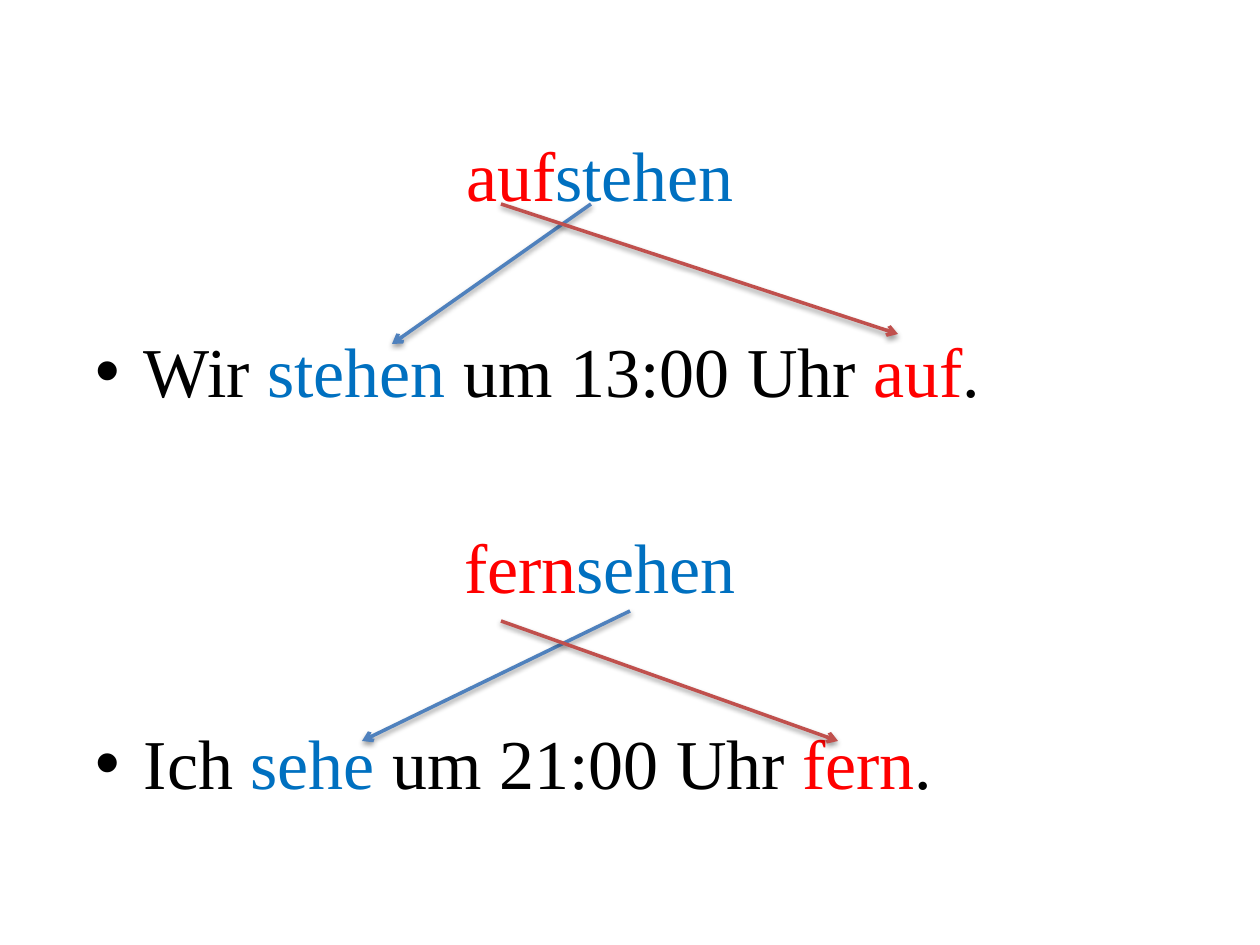
from dataclasses import dataclass

from lxml import etree
from pptx import Presentation
from pptx import util as u
from pptx.dml.color import RGBColor
from pptx.enum import shapes, text
from pptx.oxml import ns

EMU_PER_PX = 914400 / 126


def px(length):
    return u.Emu(round(length * EMU_PER_PX))


@dataclass(frozen=True)
class Theme:
    font: str = "Times New Roman"
    size: int = 40
    gap: int = 64
    line_width: int = 2
    plain: str = "000000"
    prefix: str = "FF0000"
    stem: str = "0070C0"
    prefix_arrow: str = "C0504D"
    stem_arrow: str = "4F81BD"
    shadow: str = "000000"


class SlideBuilder:
    def __init__(self, slide, theme):
        self.slide = slide
        self.theme = theme

    def add_child(self, parent, tag, **attributes):
        return etree.SubElement(parent, ns.qn(tag), attributes)

    def text_body(self, left, top, width, height):
        frame = self.slide.shapes.add_textbox(
            px(left), px(top), px(width), px(height)
        ).text_frame
        frame.word_wrap = True
        frame.margin_left = frame.margin_right = px(12)
        frame.margin_top = frame.margin_bottom = px(7)
        return frame

    def paragraph(self, frame, parts, bulleted):
        first = frame.paragraphs[0]
        line = frame.add_paragraph() if first.runs else first
        line.space_after = u.Pt(self.theme.gap)
        if bulleted:
            self.bullet(line)
        else:
            line.alignment = text.PP_ALIGN.CENTER
        line.font.name = self.theme.font
        line.font.size = u.Pt(self.theme.size)
        for wording, color in parts:
            run = line.add_run()
            run.text = wording
            run.font.color.rgb = RGBColor.from_string(color)

    def bullet(self, line):
        properties = line._p.get_or_add_pPr()
        properties.set("marL", str(px(48)))
        properties.set("indent", str(px(-48)))
        self.add_child(properties, "a:buFont", typeface="Arial")
        self.add_child(properties, "a:buChar", char="•")

    def arrow(self, start, end, color):
        connector = self.slide.shapes.add_connector(
            shapes.MSO_CONNECTOR.STRAIGHT, *map(px, start + end)
        )
        connector.line.color.rgb = RGBColor.from_string(color)
        connector.line.width = u.Pt(self.theme.line_width)
        self.add_child(connector.line._get_or_add_ln(), "a:tailEnd", type="arrow")
        effects = self.add_child(connector._element.spPr, "a:effectLst")
        shadow = self.add_child(
            effects, "a:outerShdw", blurRad="40000", dist="20000",
            dir="5400000", rotWithShape="0",
        )
        shade = self.add_child(shadow, "a:srgbClr", val=self.theme.shadow)
        self.add_child(shade, "a:alpha", val="38000")


def main():
    theme = Theme()
    presentation = Presentation()
    presentation.slide_width = px(1260)
    presentation.slide_height = px(945)
    slide = presentation.slides.add_slide(presentation.slide_layouts[6])
    builder = SlideBuilder(slide, theme)

    examples = [
        ("auf", "stehen", "Wir ", "stehen", " um 13:00 Uhr "),
        ("fern", "sehen", "Ich ", "sehe", " um 21:00 Uhr "),
    ]
    body = builder.text_body(84, 125, 1032, 665)
    for prefix, stem, subject, verb, time in examples:
        infinitive = [(prefix, theme.prefix), (stem, theme.stem)]
        sentence = [
            (subject, theme.plain),
            (verb, theme.stem),
            (time, theme.plain),
            (prefix, theme.prefix),
            (".", theme.plain),
        ]
        builder.paragraph(body, infinitive, bulleted=False)
        builder.paragraph(body, sentence, bulleted=True)

    arrows = [
        ((591, 204), (392, 344), theme.stem_arrow),
        ((630, 611), (362, 741), theme.stem_arrow),
        ((501, 204), (898, 334), theme.prefix_arrow),
        ((501, 621), (838, 741), theme.prefix_arrow),
    ]
    for start, end, color in arrows:
        builder.arrow(start, end, color)

    presentation.save("out.pptx")


if __name__ == "__main__":
    main()
